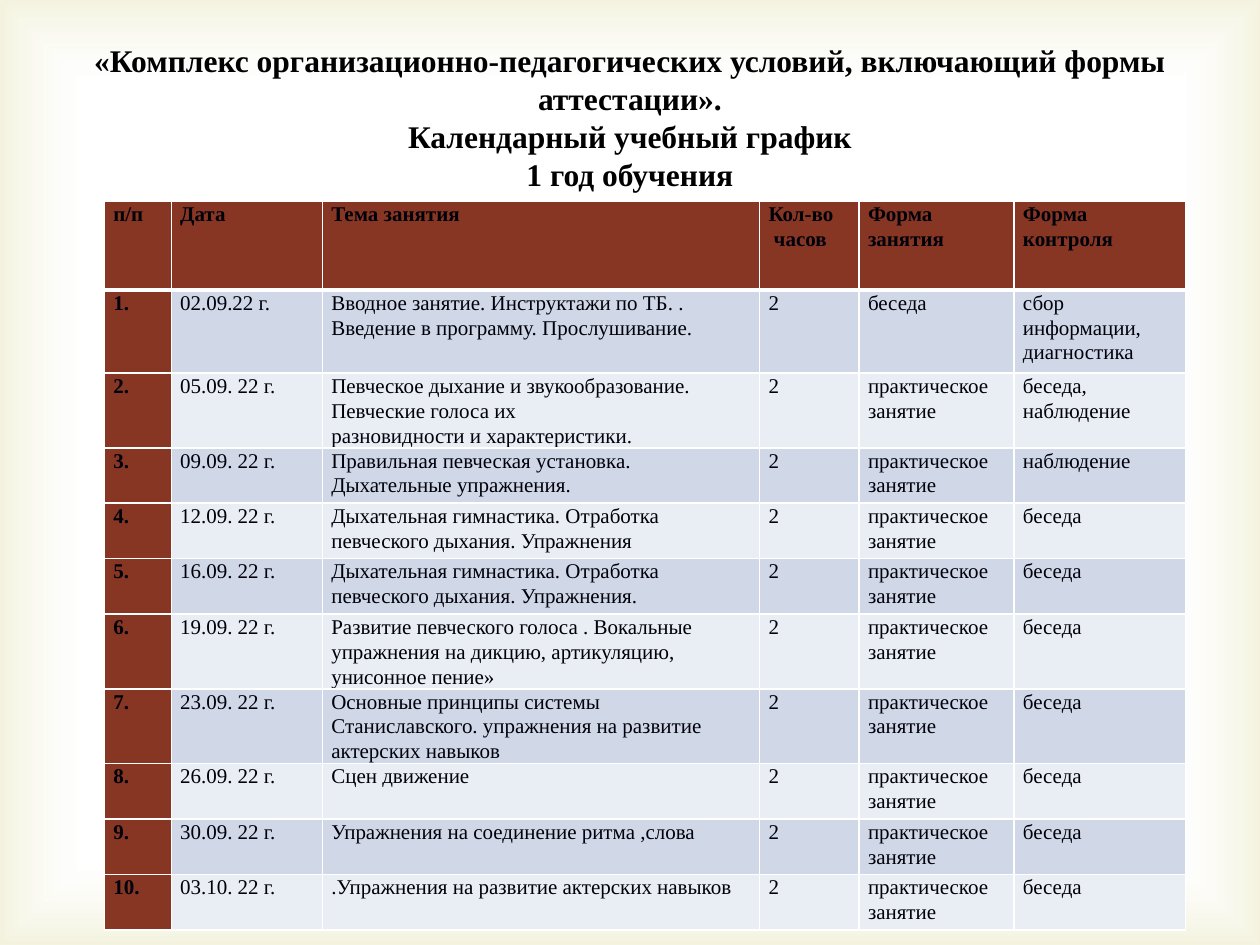
from lxml import etree
from pptx import Presentation
from pptx import util as u
from pptx.dml.color import RGBColor
from pptx.enum import shapes, text

BLACK = RGBColor(0x00, 0x00, 0x00)
INK = RGBColor(0x00, 0x00, 0x0A)
BROWN = RGBColor(0x87, 0x36, 0x24)
BANDS = RGBColor(0xE9, 0xED, 0xF4), RGBColor(0xD0, 0xD8, 0xE8)
WHITE = RGBColor(0xFF, 0xFF, 0xFF)
SAND = RGBColor(0xD1, 0xCA, 0x75)
NS = "http://schemas.openxmlformats.org/drawingml/2006/main"


def write(frame, words, size, color=BLACK, bold=False, align=None, space=None):
    """Put one paragraph per line of words; \\v breaks a line inside one."""
    frame.text = words
    for para in frame.paragraphs:
        para.alignment, para.line_spacing = align, space
        for run in para.runs:
            font = run.font
            font.name, font.size, font.bold = "Times New Roman", u.Pt(size), bold
            font.color.rgb = color


def edge(cell, sides):
    """Draw white borders, given as side letter and width in points."""
    props = cell._tc.get_or_add_tcPr()
    for spot, (side, width) in enumerate(sides):
        props.insert(spot, etree.fromstring(
            f'<a:ln{side} xmlns:a="{NS}" w="{u.Pt(width)}"><a:solidFill>'
            f'<a:srgbClr val="{WHITE}"/></a:solidFill></a:ln{side}>'))


deck = Presentation()
deck.slide_width, deck.slide_height = u.Inches(10), u.Inches(7.5)
W, H = deck.slide_width, deck.slide_height
slide = deck.slides.add_slide(deck.slide_layouts[6])

# Soft glow along the slide's edges
glow = slide.shapes.add_shape(shapes.MSO_SHAPE.RECTANGLE, 0, 0, W, H)
glow.shadow.inherit = False
glow.line.fill.background()
glow.fill.background()
stops = "".join(
    f'<a:gs pos="{pos}000"><a:srgbClr val="{tint}"><a:alpha val="{alpha}000"/>'
    f'</a:srgbClr></a:gs>'
    for pos, tint, alpha in [(83, WHITE, 11), (100, SAND, 23)])
blank = glow._element.spPr.find(f"{{{NS}}}noFill")
blank.getparent().replace(blank, etree.fromstring(
    f'<a:gradFill xmlns:a="{NS}" rotWithShape="1"><a:gsLst>{stops}</a:gsLst>'
    '<a:path path="rect"><a:fillToRect l="50000" t="50000" r="50000" b="50000"/>'
    '</a:path></a:gradFill>'))

# Timetable
TASK = "практическое занятие"
TALK = "беседа"
HEAD = ["п/п", "Дата", "Тема занятия", "Кол-во\v часов\v", "Форма занятия",
        "Форма контроля"]
PLAN = [
    ("02.09.22 г.", "Вводное занятие. Инструктажи по ТБ. . Введение в программу. "
     "Прослушивание.", TALK, "сбор информации, диагностика"),
    ("05.09. 22 г.", "Певческое дыхание и звукообразование. Певческие голоса их\n"
     "разновидности и характеристики.", TASK, "беседа, наблюдение"),
    ("09.09. 22 г.", "Правильная певческая установка. Дыхательные упражнения.",
     TASK, "наблюдение"),
    ("12.09. 22 г.", "Дыхательная гимнастика. Отработка\n"
     "певческого дыхания. Упражнения", TASK, TALK),
    ("16.09. 22 г.", "Дыхательная гимнастика. Отработка\n"
     "певческого дыхания. Упражнения.", TASK, TALK),
    ("19.09. 22 г.", "Развитие певческого голоса . Вокальные упражнения на дикцию, "
     "артикуляцию, унисонное пение»", TASK, TALK),
    ("23.09. 22 г.", "Основные принципы системы Станиславского. упражнения на "
     "развитие актерских навыков", TASK, TALK),
    ("26.09. 22 г.", "Сцен движение", TASK, TALK),
    ("30.09. 22 г.", "Упражнения на соединение ритма ,слова", TASK, TALK),
    ("03.10. 22 г.", ".Упражнения на развитие актерских навыков", TASK, TALK),
]
rows = [HEAD] + [[f"{num}.", day, theme, "2", form, check]
                 for num, (day, theme, form, check) in enumerate(PLAN, 1)]
COLS = [0.53, 1.2, 3.47, 0.79, 1.23, 1.36]
TALL = [0.66] * 2 + [0.44] * (len(rows) - 2)

table = slide.shapes.add_table(
    len(rows), len(COLS), u.Inches(0.83), u.Inches(1.6),
    u.Inches(sum(COLS)), u.Inches(sum(TALL))).table
for col, wide in zip(table.columns, COLS):
    col.width = u.Inches(wide)
for r, line in enumerate(rows):
    table.rows[r].height = u.Inches(TALL[r])
    for c, words in enumerate(line):
        cell = table.cell(r, c)
        key = r == 0 or c == 0
        cell.margin_left = cell.margin_right = u.Inches(0.07)
        cell.margin_top = cell.margin_bottom = 0
        cell.fill.solid()
        cell.fill.fore_color.rgb = BROWN if key else BANDS[r % 2]
        edge(cell, [("L", 1), ("R", 1), ("T", 3 if r == 1 else 1),
                    ("B", 3 if r == 0 else 1)])
        write(cell.text_frame, words, 12, color=INK, bold=key, space=1.07)

# Title
title = slide.shapes.add_textbox(
    int(W * 0.035), u.Inches(0.28), int(W * 0.93), u.Inches(1.31)).text_frame
title.word_wrap = True
write(title, "«Комплекс организационно-педагогических условий, включающий формы "
      "аттестации».\nКалендарный учебный график\n1 год обучения",
      18, bold=True, align=text.PP_ALIGN.CENTER)

deck.save("out.pptx")
